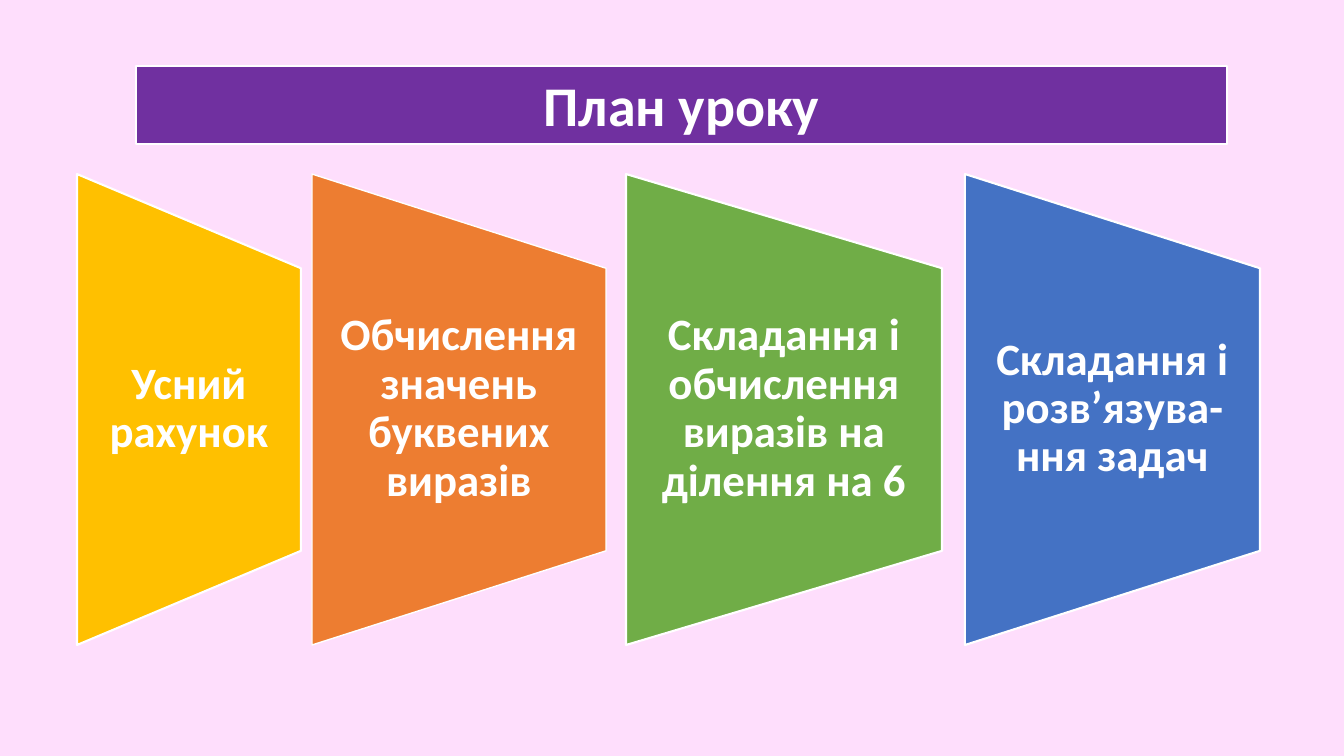
from pptx import Presentation
from pptx import util as u
from pptx.dml.color import RGBColor
from pptx.enum import shapes, text

PX = 914400 / 100.8  # EMU in one px

THEME = {
    "font": "Calibri",
    "background": "FEDEFC",
    "title_fill": "7030A0",
    "white": "FFFFFF",
    "title_size": 40,
    "panel_size": 32,
}


def px(*lengths):
    return [u.Emu(round(length * PX)) for length in lengths]


def write(shape, content, size, spacing=None, anchor=text.MSO_ANCHOR.TOP, inset=None):
    frame = shape.text_frame
    frame.word_wrap = True
    frame.vertical_anchor = anchor
    if inset is not None:
        frame.margin_left = frame.margin_right = px(inset)[0]
        frame.margin_top = frame.margin_bottom = 0
    paragraph = frame.paragraphs[0]
    paragraph.alignment = text.PP_ALIGN.CENTER
    paragraph.line_spacing = spacing
    run = paragraph.add_run()
    run.text = content
    run.font.name = THEME["font"]
    run.font.size = u.Pt(size)
    run.font.bold = True
    run.font.color.rgb = RGBColor.from_string(THEME["white"])


presentation = Presentation()
presentation.slide_width, presentation.slide_height = px(1344, 756)
slide = presentation.slides.add_slide(presentation.slide_layouts[6])
slide.background.fill.solid()
slide.background.fill.fore_color.rgb = RGBColor.from_string(THEME["background"])

# Title bar
title = slide.shapes.add_shape(shapes.MSO_SHAPE.RECTANGLE, *px(136, 66, 1091, 78))
write(title, "План уроку", THEME["title_size"])
title.text_frame.auto_size = text.MSO_AUTO_SIZE.SHAPE_TO_FIT_TEXT
filled = [(title, THEME["title_fill"], 1.5)]

# Lesson stages: left, width, fill, outline in points, label
stages = [
    (77, 224, "FFC000", 1.5, "Усний рахунок"),
    (312, 294, "ED7D31", 1, "Обчислення значень буквених виразів"),
    (626, 316, "70AD47", 1.5, "Складання і обчислення виразів на ділення на 6"),
    (965, 295, "4472C4", 1.5, "Складання і розв’язува-ння задач"),
]
PANEL_TOP, PANEL_HEIGHT = 174, 471
LABEL_TOP, LABEL_HEIGHT, LABEL_INSET = 268, 282, 22

for left, width, fill, outline, label in stages:
    # A quarter turn swaps the sides around the panel's centre
    shift = (PANEL_HEIGHT - width) / 2
    panel = slide.shapes.add_shape(
        shapes.MSO_SHAPE.FLOWCHART_MANUAL_OPERATION,
        *px(left - shift, PANEL_TOP + shift, PANEL_HEIGHT, width))
    panel.rotation = 270
    filled.append((panel, fill, outline))

    box = slide.shapes.add_textbox(*px(left, LABEL_TOP, width, LABEL_HEIGHT))
    write(box, label, THEME["panel_size"], spacing=0.9,
          anchor=text.MSO_ANCHOR.MIDDLE, inset=LABEL_INSET)

# Fills and white outlines
for shape, fill, outline in filled:
    shape.shadow.inherit = False
    shape.fill.solid()
    shape.fill.fore_color.rgb = RGBColor.from_string(fill)
    shape.line.color.rgb = RGBColor.from_string(THEME["white"])
    shape.line.width = u.Pt(outline)

presentation.save("out.pptx")
